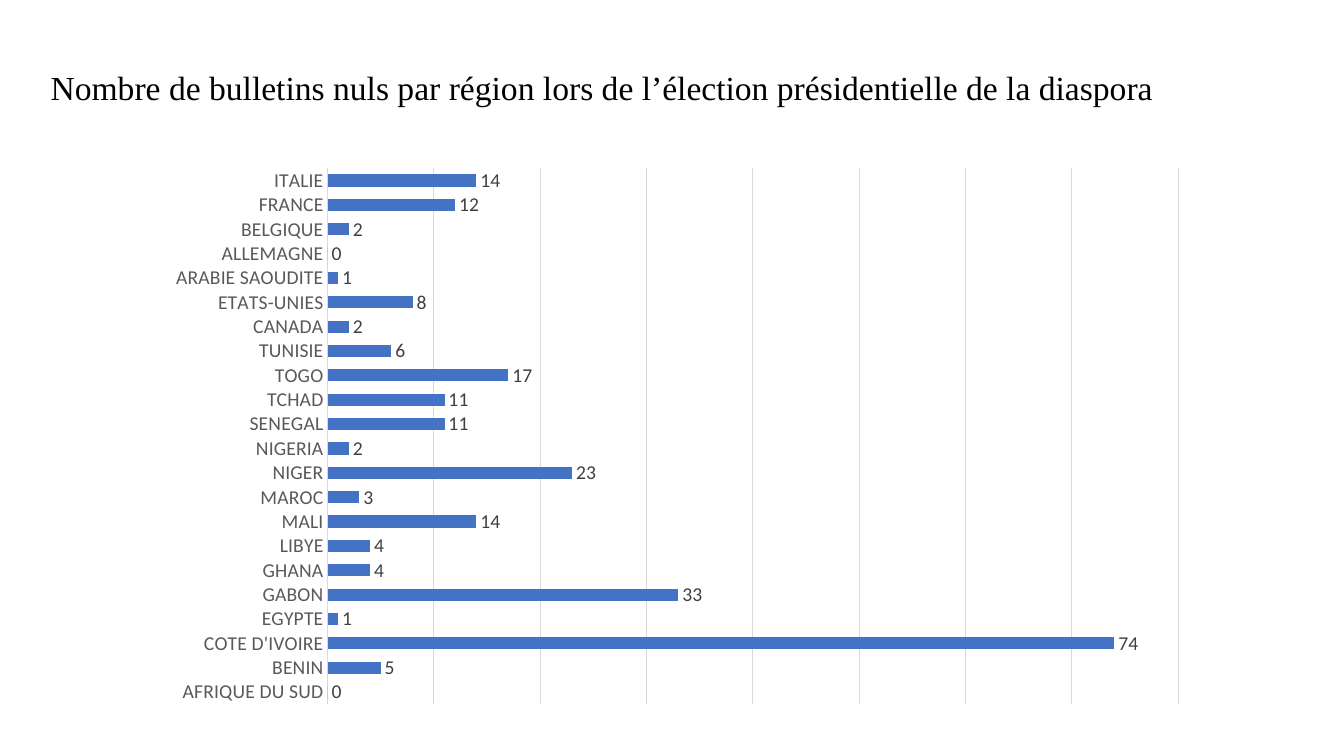
from pptx import Presentation
from pptx.chart.data import CategoryChartData
from pptx.dml.color import RGBColor
from pptx.enum import chart as ch, text as tx
from pptx.util import Cm, Pt

COLORS = {
    "title": "000000",
    "bar": "4472C4",
    "country": "595959",
    "value": "404040",
    "grid": "D9D9D9",
}

# Listed from the bottom bar to the top bar
NULL_BALLOTS = {
    "AFRIQUE DU SUD": 0,
    "BENIN": 5,
    "COTE D'IVOIRE": 74,
    "EGYPTE": 1,
    "GABON": 33,
    "GHANA": 4,
    "LIBYE": 4,
    "MALI": 14,
    "MAROC": 3,
    "NIGER": 23,
    "NIGERIA": 2,
    "SENEGAL": 11,
    "TCHAD": 11,
    "TOGO": 17,
    "TUNISIE": 6,
    "CANADA": 2,
    "ETATS-UNIES": 8,
    "ARABIE SAOUDITE": 1,
    "ALLEMAGNE": 0,
    "BELGIQUE": 2,
    "FRANCE": 12,
    "ITALIE": 14,
}


def color(name):
    return RGBColor.from_string(COLORS[name])


def style_font(font, size, color_name, family="Calibri"):
    font.size = Pt(size)
    font.name = family
    font.bold = False
    font.color.rgb = color(color_name)


def style_line(line):
    line.color.rgb = color("grid")
    line.width = Pt(0.75)


def write_text(frame, content, *, size, color_name, family,
               align=tx.PP_ALIGN.LEFT, anchor=tx.MSO_ANCHOR.MIDDLE, spacing=0.9):
    frame.word_wrap = True
    frame.vertical_anchor = anchor
    paragraph = frame.paragraphs[0]
    paragraph.alignment = align
    paragraph.line_spacing = spacing
    run = paragraph.add_run()
    run.text = content
    style_font(run.font, size, color_name, family)


def place_title(slide, content):
    title = slide.shapes.title
    title.left, title.top = Cm(1.02), Cm(1.47)
    title.width, title.height = Cm(31.85), Cm(1.55)
    write_text(title.text_frame, content, size=24, color_name="title",
               family="Times New Roman")


def add_ballot_chart(slide, ballots):
    data = CategoryChartData()
    data.categories = list(ballots)
    data.add_series("Bulletins nuls", list(ballots.values()))
    chart = slide.shapes.add_chart(
        ch.XL_CHART_TYPE.BAR_CLUSTERED,
        Cm(3.91), Cm(3.96), Cm(26.31), Cm(14.07), data).chart
    chart.has_title = False
    chart.has_legend = False
    style_font(chart.font, 14, "title")

    countries = chart.category_axis
    countries.major_tick_mark = ch.XL_TICK_MARK.NONE
    countries.has_major_gridlines = False
    style_font(countries.tick_labels.font, 14, "country")
    style_line(countries.format.line)

    counts = chart.value_axis
    counts.visible = False
    counts.minimum_scale, counts.maximum_scale, counts.major_unit = 0, 80, 10
    style_line(counts.major_gridlines.format.line)

    plot = chart.plots[0]
    plot.gap_width = 100
    plot.vary_by_categories = False
    bars = plot.series[0]
    bars.format.fill.solid()
    bars.format.fill.fore_color.rgb = color("bar")
    labels = bars.data_labels
    labels.show_value = True
    labels.position = ch.XL_LABEL_POSITION.OUTSIDE_END
    style_font(labels.font, 14, "value")


def main():
    deck = Presentation()
    deck.slide_width, deck.slide_height = Cm(33.87), Cm(19.05)
    slide = deck.slides.add_slide(deck.slide_layouts.get_by_name("Title Only"))
    place_title(slide, "Nombre de bulletins nuls par région lors de "
                       "l’élection présidentielle de la diaspora")
    add_ballot_chart(slide, NULL_BALLOTS)
    deck.save("out.pptx")


if __name__ == "__main__":
    main()
